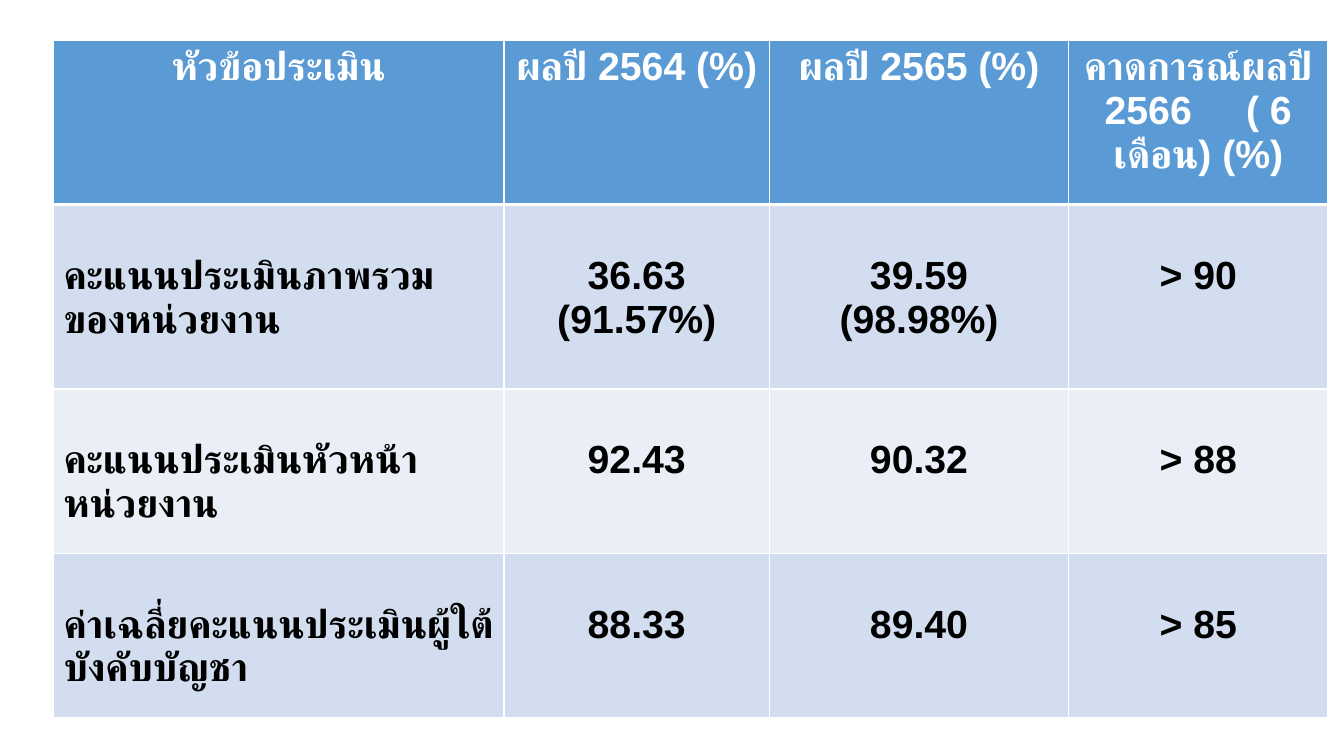
from dataclasses import dataclass

from lxml import etree
from pptx import Presentation
from pptx.dml.color import RGBColor
from pptx.enum.text import PP_ALIGN
from pptx.oxml.ns import qn
from pptx.table import _Cell
from pptx.util import Inches, Pt

CENTER = PP_ALIGN.CENTER
LEFT = PP_ALIGN.LEFT
FONT_NAME = "Arial"
FONT_SIZE = 28
WIDE_GAP = "\t"
WIDE_GAP_SPACING = 31
COLORS = {
    "white": "FFFFFF",
    "black": "000000",
    "header": "5B9BD5",
    "odd": "D2DEEF",
    "even": "EAEFF7",
}
COLUMN_WIDTHS = (4.47, 2.63, 2.97, 2.57)


@dataclass(frozen=True)
class RowStyle:
    """Look shared by the cells of a row."""

    fill: str
    text: str
    first_align: PP_ALIGN
    margin_top: float
    bottom_border: float


@dataclass(frozen=True)
class ScoreRow:
    """One table row with its height and cell texts."""

    height: float
    style: RowStyle
    texts: tuple[str, ...]


HEADER = RowStyle("header", "white", CENTER, 0.05, 3)
ODD = RowStyle("odd", "black", LEFT, 0.49, 1)
EVEN = RowStyle("even", "black", LEFT, 0.49, 1)

ROWS = (
    ScoreRow(1.63, HEADER, (
        "หัวข้อประเมิน", "ผลปี 2564 (%)", "ผลปี 2565 (%)",
        "คาดการณ์ผลปี 2566\t( 6 เดือน) (%)")),
    ScoreRow(1.83, ODD, (
        "คะแนนประเมินภาพรวมของหน่วยงาน", "36.63\n(91.57%)", "39.59\n(98.98%)", "> 90")),
    ScoreRow(1.63, EVEN, ("คะแนนประเมินหัวหน้าหน่วยงาน", "92.43", "90.32", "> 88")),
    ScoreRow(1.63, ODD, ("ค่าเฉลี่ยคะแนนประเมินผู้ใต้บังคับบัญชา", "88.33", "89.40", "> 85")),
)


def set_borders(cell: _Cell, top: float, bottom: float) -> None:
    """Draw white lines on the four sides of a cell."""
    properties = cell._tc.get_or_add_tcPr()
    sides = (("lnL", 1), ("lnR", 1), ("lnT", top), ("lnB", bottom))
    for index, (side, width) in enumerate(sides):
        line = etree.Element(qn(f"a:{side}"), w=str(Pt(width)))
        fill = etree.SubElement(line, qn("a:solidFill"))
        etree.SubElement(fill, qn("a:srgbClr"), val=COLORS["white"])
        properties.insert(index, line)


def write_text(cell: _Cell, text: str, color: str, align: PP_ALIGN) -> None:
    """Write one paragraph per line, with widened spaces at gap marks."""
    frame = cell.text_frame
    for index, line in enumerate(text.split("\n")):
        paragraph = frame.add_paragraph() if index else frame.paragraphs[0]
        paragraph.alignment = align
        for position, part in enumerate(line.split(WIDE_GAP)):
            if position:
                gap = paragraph.add_run()
                gap.text = " "
                gap._r.get_or_add_rPr().set("spc", str(WIDE_GAP_SPACING * 100))
            paragraph.add_run().text = part
        font = paragraph.font
        font.name = FONT_NAME
        font.size = Pt(FONT_SIZE)
        font.bold = True
        font.color.rgb = RGBColor.from_string(COLORS[color])
        defaults = paragraph._p.pPr.find(qn("a:defRPr"))
        etree.SubElement(defaults, qn("a:cs"), typeface=FONT_NAME)


def main() -> None:
    """Build the evaluation score slide."""
    presentation = Presentation()
    presentation.slide_width = Inches(13.33)
    presentation.slide_height = Inches(7.5)
    slide = presentation.slides.add_slide(presentation.slide_layouts[6])
    table = slide.shapes.add_table(
        len(ROWS), len(COLUMN_WIDTHS), Inches(0.53), Inches(0.4),
        Inches(sum(COLUMN_WIDTHS)), Inches(sum(row.height for row in ROWS))).table
    for column, width in zip(table.columns, COLUMN_WIDTHS):
        column.width = Inches(width)
    top_border = 1.0
    for row_index, row in enumerate(ROWS):
        style = row.style
        table.rows[row_index].height = Inches(row.height)
        for column_index, text in enumerate(row.texts):
            cell = table.cell(row_index, column_index)
            cell.margin_top = Inches(style.margin_top)
            cell.fill.solid()
            cell.fill.fore_color.rgb = RGBColor.from_string(COLORS[style.fill])
            set_borders(cell, top_border, style.bottom_border)
            align = CENTER if column_index else style.first_align
            write_text(cell, text, style.text, align)
        top_border = style.bottom_border
    presentation.save("out.pptx")


if __name__ == "__main__":
    main()
